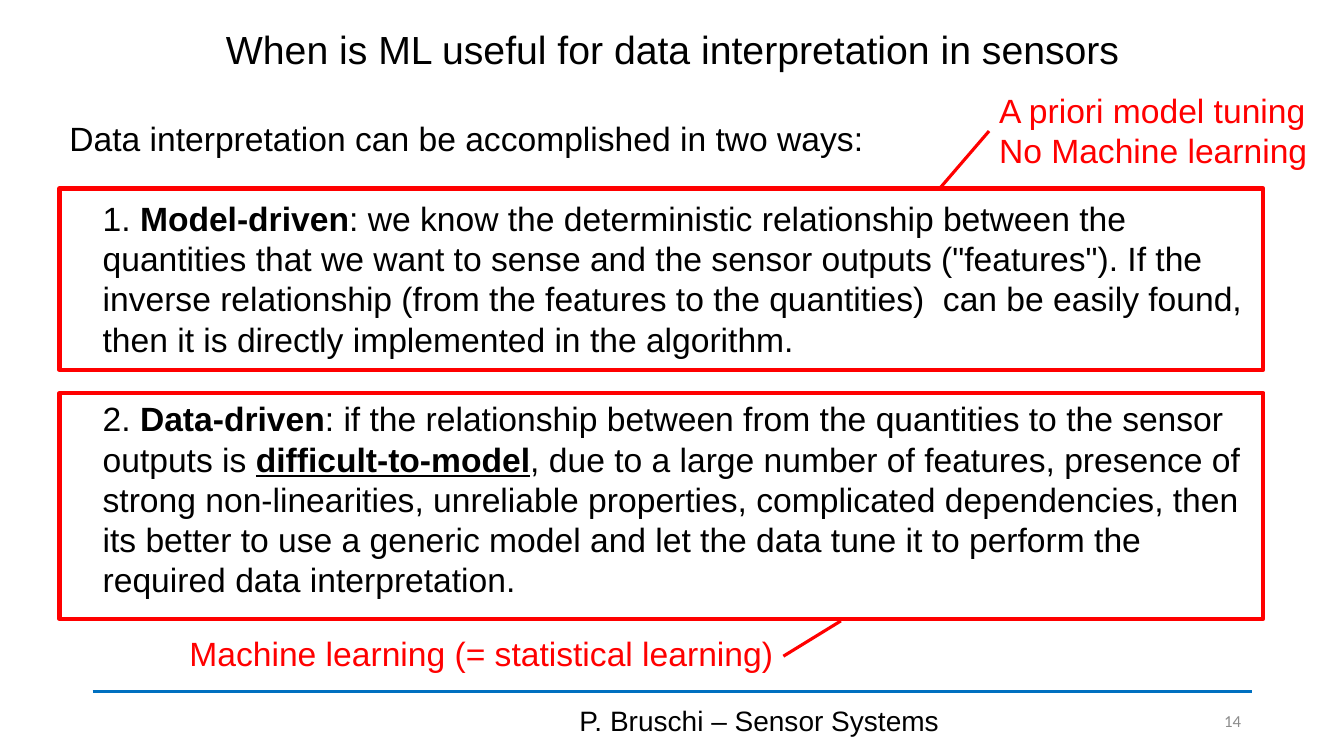
from dataclasses import dataclass
from lxml.etree import SubElement
from pptx import Presentation
from pptx.dml.color import RGBColor
from pptx.enum.shapes import MSO_CONNECTOR, MSO_SHAPE
from pptx.enum.text import MSO_ANCHOR, MSO_AUTO_SIZE, PP_ALIGN
from pptx.oxml.ns import qn
from pptx.util import Inches, Pt


@dataclass(frozen=True)
class Theme:
    """Colours, fonts and sizes of the slide."""
    black: RGBColor = RGBColor(0, 0, 0)
    red: RGBColor = RGBColor(255, 0, 0)
    blue: RGBColor = RGBColor(0, 0x70, 0xC0)
    gray: RGBColor = RGBColor(0x8C, 0x8C, 0x8C)
    font: str = "Arial"
    small: str = "Calibri"
    title: int = 28
    body: int = 24
    foot: int = 20
    page: int = 12
    frame: float = 3
    rule: float = 2.75
    link: float = 2.25


THEME = Theme()
LEFT, WIDE = 0.92, 11.5

MODEL = (
    ("1. ", ""),
    ("Model-driven", "b"),
    (": we know the deterministic relationship between the quantities that we "
     "want to sense and the sensor outputs (\"features\"). If the inverse "
     "relationship (from the features to the quantities)  can be easily found, "
     "then it is directly implemented in the algorithm.", ""),
)
DATA = (
    ("2. ", ""),
    ("Data-driven", "b"),
    (": if the relationship between from the quantities to the sensor outputs "
     "is ", ""),
    ("difficult-to-model", "bu"),
    (", due to a large number of features, presence of strong non-linearities, "
     "unreliable properties, complicated dependencies, then its better to use "
     "a generic model and let the data tune it to perform the required data "
     "interpretation.", ""),
)


def add_text(slide, box, lines, size=THEME.body, color=THEME.black,
             font=THEME.font, align=PP_ALIGN.LEFT, anchor=MSO_ANCHOR.TOP,
             wrap=True, grow=True, space=None):
    """Add a text box; each line is a list of (text, style) runs."""
    frame = slide.shapes.add_textbox(*map(Inches, box)).text_frame
    frame.word_wrap = wrap
    frame.vertical_anchor = anchor
    frame.auto_size = (MSO_AUTO_SIZE.SHAPE_TO_FIT_TEXT if grow
                       else MSO_AUTO_SIZE.NONE)
    for index, line in enumerate(lines):
        para = frame.add_paragraph() if index else frame.paragraphs[0]
        para.alignment = align
        para.line_spacing = space
        for text, style in line:
            run = para.add_run()
            run.text = text
            run.font.name = font
            run.font.size = Pt(size)
            run.font.color.rgb = color
            run.font.bold = "b" in style
            run.font.underline = "u" in style


def add_label(slide, box, *lines, **look):
    """Add a text box of plain lines."""
    add_text(slide, box, [[(line, "")] for line in lines], **look)


def add_frame(slide, top, height):
    """Add a hollow red frame around one of the two ways."""
    box = map(Inches, (0.59, top, 11.94, height))
    shape = slide.shapes.add_shape(MSO_SHAPE.RECTANGLE, *box)
    shape.shadow.inherit = False
    shape.fill.background()
    shape.line.color.rgb = THEME.red
    shape.line.width = Pt(THEME.frame)


def add_line(slide, start, end, color, width):
    """Add a straight line without shadow."""
    line = slide.shapes.add_connector(
        MSO_CONNECTOR.STRAIGHT, *map(Inches, start + end))
    line.line.color.rgb = color
    line.line.width = Pt(width)
    SubElement(line._element.spPr, qn("a:effectLst"))


def main():
    """Build the slide and save it."""
    deck = Presentation()
    deck.slide_width, deck.slide_height = Inches(13.33), Inches(7.5)
    slide = deck.slides.add_slide(deck.slide_layouts[6])

    add_line(slide, (LEFT, 6.86), (LEFT + WIDE, 6.86), THEME.blue, THEME.rule)
    add_label(slide, (LEFT, 0.15, WIDE, 0.72),
              "When is ML useful for data interpretation in sensors",
              size=THEME.title, align=PP_ALIGN.CENTER,
              anchor=MSO_ANCHOR.MIDDLE, grow=False, space=0.9)
    add_label(slide, (4.42, 6.95, 6.22, 0.4), "P. Bruschi – Sensor Systems",
              size=THEME.foot, align=PP_ALIGN.CENTER,
              anchor=MSO_ANCHOR.MIDDLE, grow=False)
    add_label(slide, (11.45, 6.95, 0.96, 0.4), "14", size=THEME.page,
              color=THEME.gray, font=THEME.small, align=PP_ALIGN.RIGHT,
              anchor=MSO_ANCHOR.MIDDLE, grow=False)

    add_label(slide, (0.59, 1.12, 10.73, 0.5),
              "Data interpretation can be accomplished in two ways:")
    add_text(slide, (LEFT, 1.91, WIDE, 1.72), [MODEL])
    add_text(slide, (LEFT, 3.9, WIDE, 2.12), [DATA])
    add_frame(slide, 1.87, 1.8)
    add_frame(slide, 3.9, 2.24)

    add_label(slide, (9.81, 0.84, 3.29, 0.91), "A priori model tuning",
              "No Machine learning", color=THEME.red, wrap=False)
    add_line(slide, (9.32, 1.87), (9.81, 1.3), THEME.red, THEME.link)
    add_label(slide, (1.78, 6.23, 6.14, 0.5),
              "Machine learning (= statistical learning)",
              color=THEME.red, wrap=False)
    add_line(slide, (7.77, 6.51), (8.34, 6.16), THEME.red, THEME.link)
    deck.save("out.pptx")


if __name__ == "__main__":
    main()
